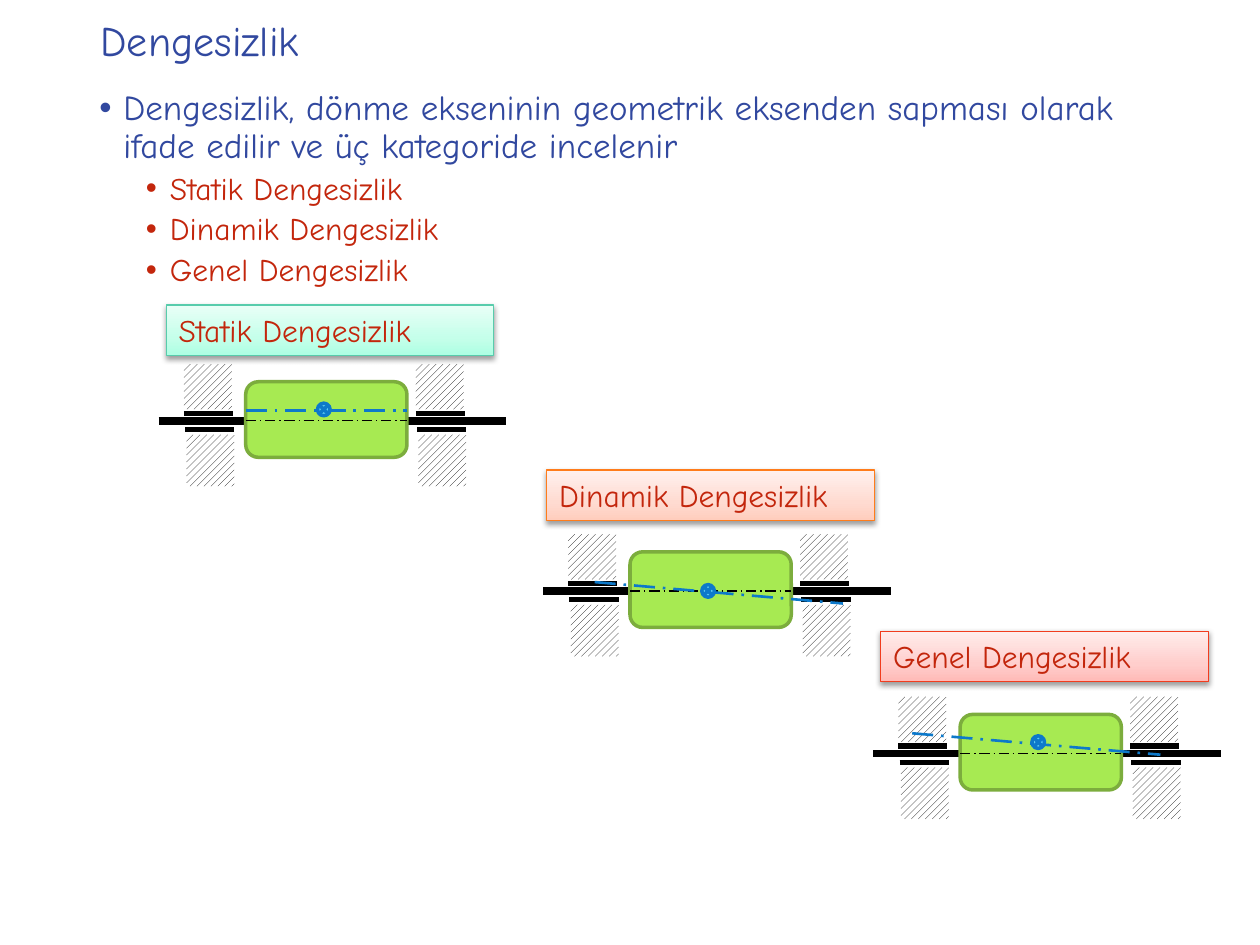
from lxml.etree import SubElement
from pptx import Presentation
from pptx.dml.color import RGBColor
from pptx.enum.dml import MSO_LINE, MSO_PATTERN
from pptx.enum.shapes import MSO_CONNECTOR, MSO_SHAPE
from pptx.enum.text import MSO_ANCHOR
from pptx.oxml import parse_xml
from pptx.oxml.ns import nsdecls, qn
from pptx.util import Inches, Pt

COLORS = {
    "blue": "31489F", "red": "C3260C", "black": "000000", "white": "FFFFFF",
    "rotor": "A7EA52", "rotor_edge": "7CAD3D", "mass": "5ECCF3", "mass_edge": "0D79CA",
}


def rgb(name):
    return RGBColor.from_string(COLORS.get(name, name))


class SlideBuilder:
    font_name = "Comic Neue"

    def __init__(self, slide):
        self.slide = slide

    def style_text(self, paragraph, text, size, color):
        paragraph.text = text
        paragraph.font.name = self.font_name
        paragraph.font.size = Pt(size)
        paragraph.font.color.rgb = rgb(color)

    def text_frame(self, left, top, width, height, anchor=MSO_ANCHOR.TOP):
        box = self.slide.shapes.add_textbox(
            Inches(left), Inches(top), Inches(width), Inches(height))
        box.text_frame.word_wrap = True
        box.text_frame.vertical_anchor = anchor
        return box.text_frame

    def title(self, text):
        frame = self.text_frame(0.7, 0.08, 8.62, 0.52, MSO_ANCHOR.MIDDLE)
        paragraph = frame.paragraphs[0]
        paragraph.line_spacing = 0.9
        self.style_text(paragraph, text, 24, "blue")

    def bullets(self, items):
        frame = self.text_frame(0.69, 0.67, 8.62, 6.67)
        for index, (text, level) in enumerate(items):
            paragraph = frame.add_paragraph() if index else frame.paragraphs[0]
            paragraph.level = level
            paragraph.line_spacing = 0.9
            paragraph.space_before = Pt(3.8 if level else 7.5)
            properties = paragraph._p.get_or_add_pPr()
            properties.set("marL", str(Inches(0.56 if level else 0.19)))
            properties.set("indent", str(Inches(-0.19)))
            SubElement(properties, qn("a:buFont"), typeface="Arial")
            SubElement(properties, qn("a:buChar"), char="•")
            self.style_text(paragraph, text, 18 if level else 20, "red" if level else "blue")

    def shape(self, shapes, kind, left, top, width, height, fill=None, edge=None, weight=2):
        shape = shapes.add_shape(
            kind, Inches(left), Inches(top), Inches(width), Inches(height))
        shape.shadow.inherit = False
        if fill:
            shape.fill.solid()
            shape.fill.fore_color.rgb = rgb(fill)
        if edge:
            shape.line.color.rgb = rgb(edge)
            shape.line.width = Pt(weight)
        else:
            shape.line.fill.background()
        return shape

    def hatch(self, shapes, left, top, width, height):
        shape = self.shape(shapes, MSO_SHAPE.RECTANGLE, left, top, width, height)
        shape.fill.patterned()
        shape.fill.pattern = MSO_PATTERN.WIDE_UPWARD_DIAGONAL
        shape.fill.fore_color.rgb = rgb("black")
        shape.fill.back_color.rgb = rgb("white")

    def line(self, shapes, start, end, color, weight, dash=None):
        connector = shapes.add_connector(
            MSO_CONNECTOR.STRAIGHT, *(Inches(value) for value in (*start, *end)))
        connector.line.color.rgb = rgb(color)
        connector.line.width = Pt(weight)
        if dash:
            connector.line.dash_style = dash
        SubElement(connector._element.spPr, qn("a:effectLst"))

    def rotor(self, left, axis, mass_rise, tilt_start, tilt_end):
        shapes = self.slide.shapes.add_group_shape().shapes
        for bearing in (left + 0.2, left + 2.04):
            self.hatch(shapes, bearing, axis - 0.45, 0.38, 0.36)
            self.line(shapes, (bearing, axis - 0.06), (bearing + 0.39, axis - 0.06), "black", 3)
            self.hatch(shapes, bearing + 0.02, axis + 0.11, 0.38, 0.41)
            self.line(shapes, (bearing + 0.01, axis + 0.07), (bearing + 0.4, axis + 0.07), "black", 3)
        self.line(shapes, (left, axis), (left + 2.76, axis), "black", 4.5)
        self.shape(shapes, MSO_SHAPE.ROUNDED_RECTANGLE,
                   left + 0.69, axis - 0.31, 1.28, 0.6, "rotor", "rotor_edge")
        dash = MSO_LINE.LONG_DASH_DOT
        self.line(shapes, (left + 0.69, axis), (left + 1.97, axis), "black", 0.75, dash)
        start, end = ((left + x, axis + y) for x, y in (tilt_start, tilt_end))
        self.line(shapes, start, end, "mass_edge", 1.5, dash)
        self.shape(shapes, MSO_SHAPE.FLOWCHART_SUMMING_JUNCTION,
                   left + 1.26, axis - mass_rise, 0.1, 0.1, "mass", "mass_edge")

    def label(self, text, left, top, edge, gradient):
        shape = self.shape(self.slide.shapes, MSO_SHAPE.RECTANGLE,
                           left, top, 2.6, 0.4, edge=edge, weight=0.75)
        stops = "".join(
            f'<a:gs pos="{position * 1000}"><a:srgbClr val="{color}"/></a:gs>'
            for position, color in zip((0, 35, 100), gradient))
        properties = shape._element.spPr
        properties.find(qn("a:prstGeom")).addnext(parse_xml(
            f'<a:gradFill {nsdecls("a")} rotWithShape="1"><a:gsLst>{stops}</a:gsLst>'
            '<a:lin ang="16200000" scaled="0"/></a:gradFill>'))
        properties.find(qn("a:effectLst")).append(parse_xml(
            f'<a:outerShdw {nsdecls("a")} blurRad="{Pt(3.1)}" dist="{Pt(1.6)}" dir="5400000" '
            'rotWithShape="0"><a:srgbClr val="000000"><a:alpha val="38000"/></a:srgbClr>'
            '</a:outerShdw>'))
        shape.text_frame.word_wrap = True
        shape.text_frame.vertical_anchor = MSO_ANCHOR.TOP
        paragraph = shape.text_frame.paragraphs[0]
        paragraph.alignment = 1
        self.style_text(paragraph, text, 18, "red")


def main():
    presentation = Presentation()
    presentation.slide_width = Inches(10)
    presentation.slide_height = Inches(7.5)
    builder = SlideBuilder(presentation.slides.add_slide(presentation.slide_layouts[6]))

    labels = [
        ("Statik Dengesizlik", 1.32, 2.42, "58CCAC", ("AEFFE3", "C5FFEA", "E9FFF7")),
        ("Dinamik Dengesizlik", 4.34, 3.73, "FF7C1B", ("FFCDBD", "FFDBD1", "FFF1EE")),
        ("Genel Dengesizlik", 6.99, 5.01, "F13C1E", ("FFBAB7", "FFCECC", "FFEDEC")),
    ]
    rotors = [
        (1.26, 3.34, 0.14, (0.69, -0.08), (1.97, -0.08)),
        (4.31, 4.69, 0.05, (0.41, -0.07), (2.38, 0.1)),
        (6.93, 5.98, 0.14, (0.31, -0.16), (2.28, 0.01)),
    ]

    builder.title("Dengesizlik")
    definition = ("Dengesizlik, dönme ekseninin geometrik eksenden sapması olarak "
                  "ifade edilir ve üç kategoride incelenir")
    builder.bullets([(definition, 0)] + [(label[0], 1) for label in labels])
    for rotor in rotors:
        builder.rotor(*rotor)
    for label in labels:
        builder.label(*label)
    presentation.save("out.pptx")


if __name__ == "__main__":
    main()
